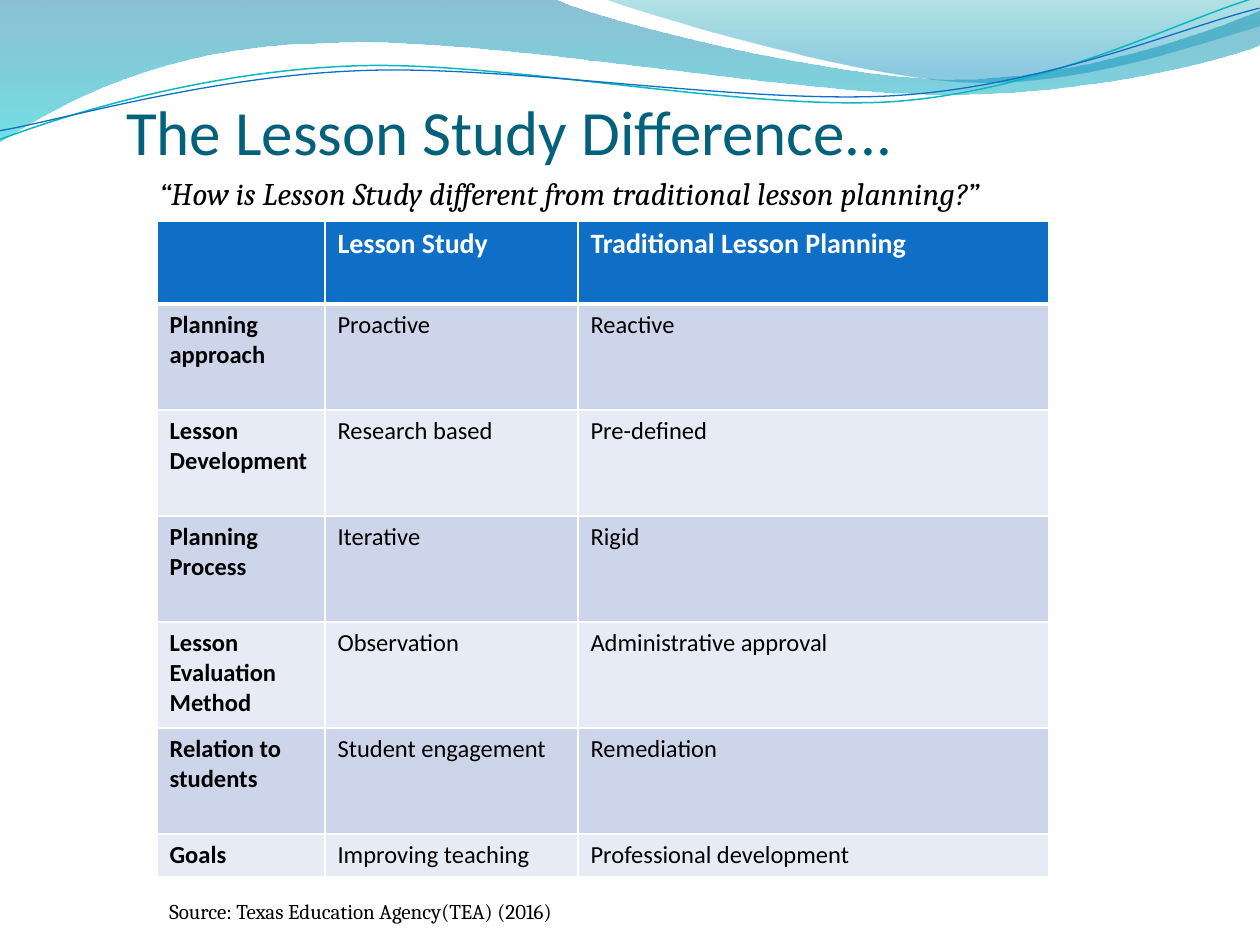
from dataclasses import dataclass
from typing import Optional

from lxml.etree import SubElement
from pptx import Presentation
from pptx.dml.color import RGBColor
from pptx.enum.text import MSO_ANCHOR, MSO_AUTO_SIZE, PP_ALIGN
from pptx.oxml.ns import qn
from pptx.util import Emu, Pt

EMU_PER_PX = 914400 / 126

WHITE = RGBColor(0xFF, 0xFF, 0xFF)
BLACK = RGBColor(0x00, 0x00, 0x00)
TITLE_TEAL = RGBColor(0x04, 0x61, 0x7B)
BLUE = RGBColor(0x0F, 0x6F, 0xC6)
TEAL = RGBColor(0x0A, 0xB8, 0xBF)
DARK_BAND = RGBColor(0xCC, 0xD5, 0xEA)
LIGHT_BAND = RGBColor(0xE7, 0xEB, 0xF5)


@dataclass(frozen=True)
class GradientStop:
    position: float
    color: RGBColor
    opacity: int


@dataclass(frozen=True)
class Wave:
    """An outline in px: segments of 2 numbers are lines, of 6 are Bézier curves."""
    box: tuple[int, int, int, int]
    start: tuple[int, int]
    segments: list[tuple[int, ...]]
    gradient: tuple[GradientStop, ...] = ()
    line_color: Optional[RGBColor] = None
    line_width: float = 0
    rotation: float = 0


@dataclass(frozen=True)
class Caption:
    text: str
    box: tuple[int, int, int, int]
    font: dict


WAVES = [
    Wave((-1, -1, 1262, 143), (0, 0),
         [(554, -1), (600, 21, 837, 79, 955, 79), (1075, 79, 1207, 33, 1260, 11),
          (1261, 45), (1239, 55, 1096, 96, 940, 94), (784, 94, 481, 35, 324, 43),
          (163, 45, 58, 105, -1, 142), (0, 0)],
         gradient=(GradientStop(0, RGBColor(0x00, 0x74, 0xA1), 45),
                   GradientStop(1, RGBColor(0x00, 0xC6, 0xCF), 55))),
    Wave((604, -1, 656, 88), (604, -1),
         [(642, 14, 859, 78, 969, 82), (1079, 87, 1211, 40, 1260, 26),
          (1260, 0), (604, -1)],
         gradient=(GradientStop(0, RGBColor(0x00, 0xA1, 0xA9), 30),
                   GradientStop(0.8, RGBColor(0x00, 0x8B, 0xBF), 45))),
    Wave((-3, 28, 1263, 89), (-3, 110),
         [(59, 90, 199, 52, 350, 53), (499, 53, 745, 118, 896, 114),
          (1049, 109, 1184, 45, 1260, 27)],
         line_color=TEAL, line_width=0.85, rotation=357.3),
    Wave((-3, 38, 1264, 73), (-2, 101),
         [(57, 94, 207, 57, 357, 58), (509, 58, 750, 112, 902, 108),
          (1052, 104, 1188, 52, 1262, 38)],
         line_color=BLUE, line_width=0.75, rotation=357.3),
]

CAPTIONS = [
    Caption("“How is Lesson Study different from traditional lesson planning?”",
            (147, 168, 919, 50), {"name": "Cambria", "size": Pt(18), "italic": True}),
    Caption("Source: Texas Education Agency(TEA) (2016)",
            (157, 892, 435, 38), {"name": "Cambria", "size": Pt(12)}),
]

COMPARISON = [
    ("", "Lesson Study", "Traditional Lesson Planning"),
    ("Planning approach", "Proactive", "Reactive"),
    ("Lesson Development", "Research based", "Pre-defined"),
    ("Planning Process", "Iterative", "Rigid"),
    ("Lesson Evaluation Method", "Observation", "Administrative approval"),
    ("Relation to students", "Student engagement", "Remediation"),
    ("Goals", "Improving teaching", "Professional development"),
]
COLUMN_WIDTHS = [168, 253, 471]
ROW_HEIGHTS = [83] + [106] * 5 + [42]


def px(length: float) -> Emu:
    return Emu(round(length * EMU_PER_PX))


def format_font(font, color: RGBColor, values: dict) -> None:
    font.color.rgb = color
    for attribute, value in values.items():
        setattr(font, attribute, value)


def trace_outline(outline, wave: Wave) -> None:
    """Write the wave's lines and curves into an emptied a:path element."""
    left, top, width, height = wave.box
    for command in list(outline):
        outline.remove(command)
    outline.set("w", str(px(width)))
    outline.set("h", str(px(height)))
    tags = {2: "a:lnTo", 6: "a:cubicBezTo"}
    commands = [("a:moveTo", wave.start)]
    commands += [(tags[len(segment)], segment) for segment in wave.segments]
    for tag, numbers in commands:
        command = SubElement(outline, qn(tag))
        for x, y in zip(numbers[::2], numbers[1::2]):
            SubElement(command, qn("a:pt"), x=str(px(x - left)), y=str(px(y - top)))
    if wave.gradient:
        SubElement(outline, qn("a:close"))


def draw_wave(shapes, wave: Wave) -> None:
    left, top, width, height = wave.box
    builder = shapes.build_freeform(left, top, scale=EMU_PER_PX)
    builder.add_line_segments([(left + width, top + height)], close=False)
    ribbon = builder.convert_to_shape()
    trace_outline(next(ribbon._element.spPr.iter(qn("a:path"))), wave)
    ribbon.rotation = wave.rotation
    ribbon.shadow.inherit = False
    if not wave.gradient:
        ribbon.fill.background()
        ribbon.line.color.rgb = wave.line_color
        ribbon.line.width = Pt(wave.line_width)
        return
    ribbon.line.fill.background()
    ribbon.fill.gradient()
    ribbon.fill.gradient_angle = 270
    for stop, wanted in zip(ribbon.fill.gradient_stops, wave.gradient):
        stop.position = wanted.position
        stop.color.rgb = wanted.color
    for color, wanted in zip(ribbon._element.spPr.iter(qn("a:srgbClr")), wave.gradient):
        SubElement(color, qn("a:alpha"), val=str(wanted.opacity * 1000))


def draw_title(slide, text: str) -> None:
    title = slide.shapes.title
    title.left, title.top, title.width, title.height = map(px, (126, 10, 1134, 158))
    frame = title.text_frame
    frame.text = text
    frame.vertical_anchor = MSO_ANCHOR.BOTTOM
    frame.margin_left = frame.margin_right = frame.margin_bottom = 0
    frame.paragraphs[0].alignment = PP_ALIGN.LEFT
    format_font(frame.paragraphs[0].runs[0].font, TITLE_TEAL,
                {"name": "Calibri", "size": Pt(36)})
    title._element.getparent().append(title._element)  # in front of the waves


def draw_caption(shapes, caption: Caption) -> None:
    frame = shapes.add_textbox(*map(px, caption.box)).text_frame
    frame.word_wrap = False
    frame.auto_size = MSO_AUTO_SIZE.SHAPE_TO_FIT_TEXT
    frame.text = caption.text
    format_font(frame.paragraphs[0].runs[0].font, BLACK, caption.font)


def add_header_borders(cell) -> None:
    properties = cell._tc.get_or_add_tcPr()
    for side, width in {"L": 1, "R": 1, "T": 1, "B": 3}.items():
        border = SubElement(properties, qn(f"a:ln{side}"), w=str(Pt(width)))
        fill = SubElement(border, qn("a:solidFill"))
        SubElement(fill, qn("a:srgbClr"), val=str(WHITE))


def draw_comparison(shapes) -> None:
    table = shapes.add_table(len(COMPARISON), len(COLUMN_WIDTHS), px(157), px(221),
                             px(sum(COLUMN_WIDTHS)), px(sum(ROW_HEIGHTS))).table
    for column, width in zip(table.columns, COLUMN_WIDTHS):
        column.width = px(width)
    for r, (texts, height) in enumerate(zip(COMPARISON, ROW_HEIGHTS)):
        table.rows[r].height = px(height)
        is_header = r == 0
        band = BLUE if is_header else DARK_BAND if r % 2 else LIGHT_BAND
        for c, text in enumerate(texts):
            cell = table.cell(r, c)
            if is_header:
                add_header_borders(cell)
            cell.fill.solid()
            cell.fill.fore_color.rgb = band
            if text:
                cell.text = text
                format_font(cell.text_frame.paragraphs[0].runs[0].font,
                            WHITE if is_header else BLACK,
                            {"name": "Calibri", "size": Pt(16 if is_header else 14),
                             "bold": is_header or c == 0})


def main() -> None:
    presentation = Presentation()
    presentation.slide_width, presentation.slide_height = px(1260), px(945)
    slide = presentation.slides.add_slide(presentation.slide_layouts[5])
    for wave in WAVES:
        draw_wave(slide.shapes, wave)
    draw_title(slide, "The Lesson Study Difference...")
    draw_comparison(slide.shapes)
    for caption in CAPTIONS:
        draw_caption(slide.shapes, caption)
    presentation.save("out.pptx")


if __name__ == "__main__":
    main()
